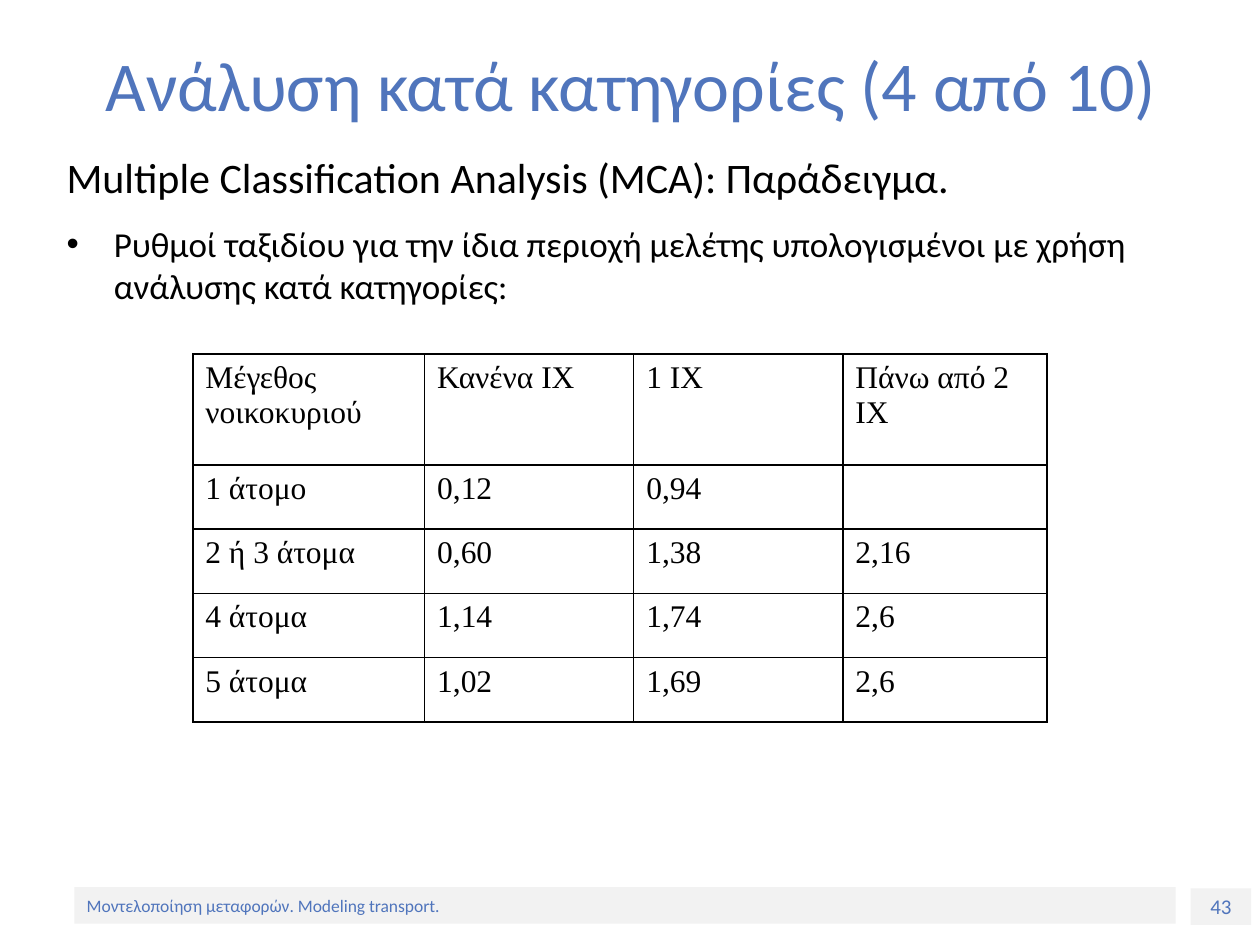
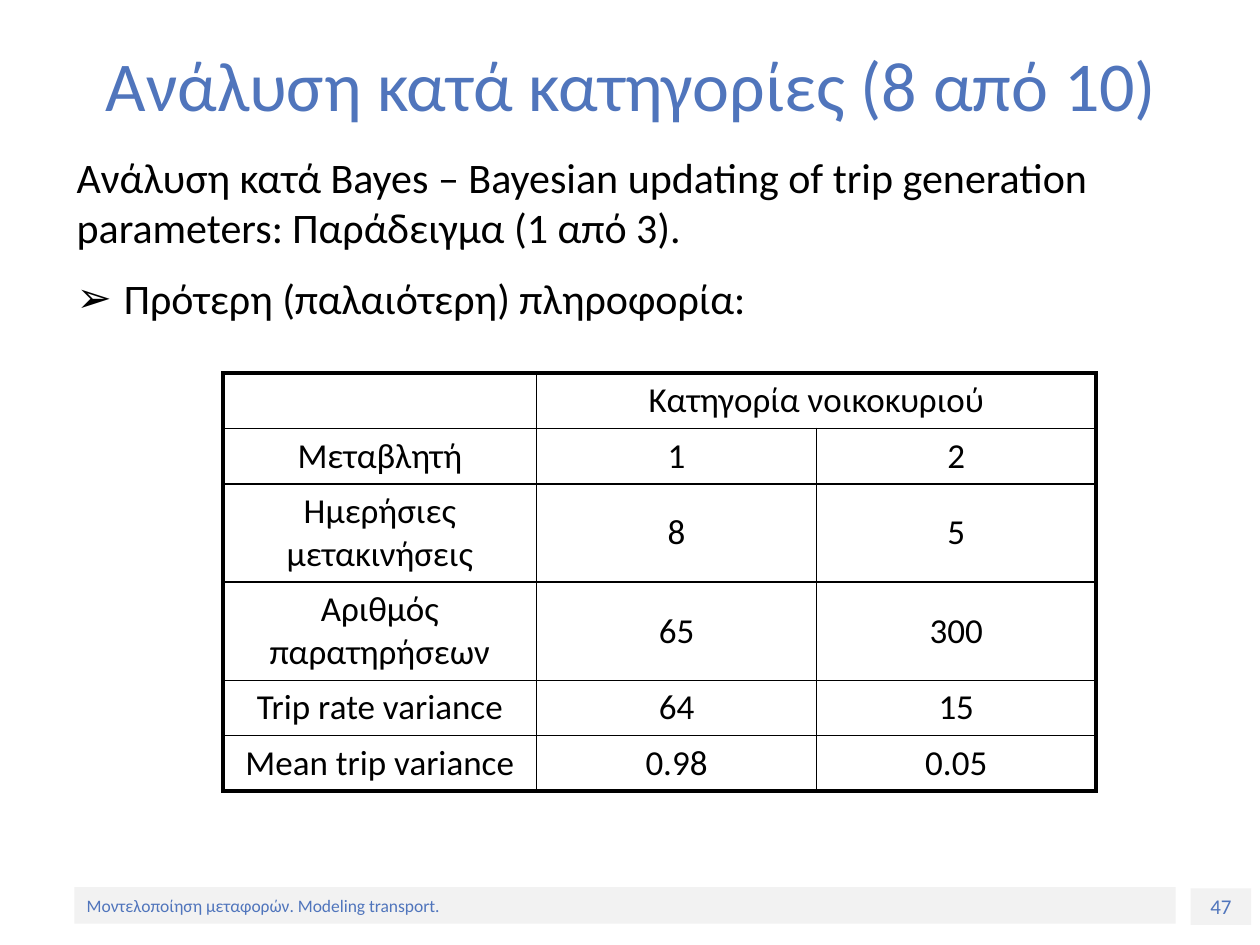
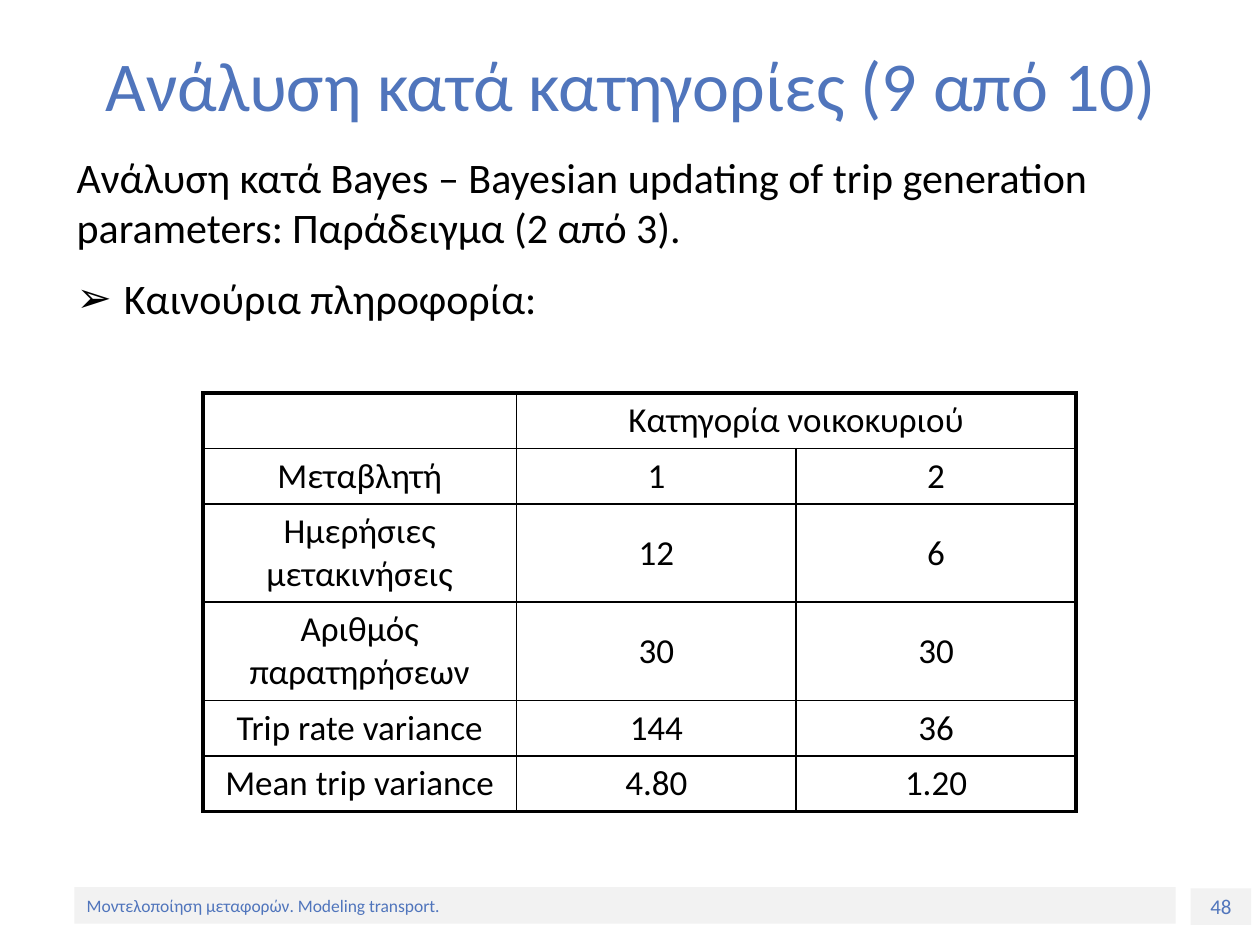
from lxml import etree
from pptx import Presentation
from pptx.dml.color import RGBColor
from pptx.enum.shapes import MSO_SHAPE
from pptx.enum.text import MSO_ANCHOR, PP_ALIGN
from pptx.oxml.ns import qn
from pptx.util import Emu, Inches, Pt

RECTANGLE = MSO_SHAPE.RECTANGLE
TOP, MIDDLE = MSO_ANCHOR.TOP, MSO_ANCHOR.MIDDLE
LEFT, CENTER = PP_ALIGN.LEFT, PP_ALIGN.CENTER

# The grid divides the slide into 100 columns and 75 rows
COLUMNS, ROWS = 100, 75
BLUE, BLACK, GRAY = "5075BC", "000000", "F2F2F2"
SANS, SERIF = "Calibri", "Times New Roman"
FOOTER = "Μοντελοποίηση μεταφορών. Modeling transport."


def color(value):
    return RGBColor.from_string(value)


def set_values(target, values):
    for name, value in values.items():
        setattr(target, name, value)


class Deck:
    """Holds the shared style and the current slide."""

    def __init__(self):
        self.presentation = Presentation()
        set_values(self.presentation,
                   {"slide_width": Inches(10), "slide_height": Inches(7.5)})
        self.slide = None

    def x(self, columns):
        return Emu(round(self.presentation.slide_width * columns / COLUMNS))

    def y(self, rows):
        return Emu(round(self.presentation.slide_height * rows / ROWS))

    def place(self, left, top, width, height):
        return self.x(left), self.y(top), self.x(width), self.y(height)

    def fill_paragraph(self, paragraph, text, size, ink=BLACK, font=SANS,
                       align=LEFT, bullet=None, before=0):
        paragraph.text = text
        if bullet:
            indent = self.x(3.75)
            properties = paragraph._p.get_or_add_pPr()
            properties.set("marL", str(indent))
            properties.set("indent", str(-indent))
            for tag, name, value in (("a:buFont", "typeface", "Arial"),
                                     ("a:buChar", "char", bullet)):
                etree.SubElement(properties, qn(tag)).set(name, value)
        set_values(paragraph, {"alignment": align, "space_before": Pt(before)})
        set_values(paragraph.font, {"name": font, "size": Pt(size)})
        paragraph.font.color.rgb = color(ink)

    def band(self, box, text, size, align):
        shape = self.slide.shapes.add_shape(RECTANGLE, *self.place(*box))
        shape.shadow.inherit = False
        shape.fill.solid()
        shape.fill.fore_color.rgb = color(GRAY)
        shape.line.fill.background()
        shape.text_frame.vertical_anchor = MIDDLE
        self.fill_paragraph(shape.text_frame.paragraphs[0], text, size, BLUE,
                            align=align)

    def text(self, box, anchor, paragraphs):
        frame = self.slide.shapes.add_textbox(*self.place(*box)).text_frame
        set_values(frame, {"word_wrap": True, "vertical_anchor": anchor})
        for index, values in enumerate(paragraphs):
            paragraph = frame.add_paragraph() if index else frame.paragraphs[0]
            self.fill_paragraph(paragraph, **values)

    def start_slide(self, part, page):
        """Adds a slide with its footer bands and numbered title."""
        layout = self.presentation.slide_layouts[6]
        self.slide = self.presentation.slides.add_slide(layout)
        self.band((94.5, 70.5, 4.8, 2.9), str(page), 12, CENTER)
        self.band((5.9, 70.4, 87.4, 2.9), FOOTER, 10, LEFT)
        title = f"Ανάλυση κατά κατηγορίες ({part} από 10)"
        self.text((5.1, 2.8, 90, 7.7), MIDDLE,
                  [{"text": title, "size": 40, "ink": BLUE, "align": CENTER}])

    def body(self, left, heading, item, bullet, item_size):
        self.text((left, 11.5, COLUMNS - 2 * left, 59.1), TOP, [
            {"text": heading, "size": 24},
            {"text": item, "size": item_size, "bullet": bullet, "before": 12}])

    def borders(self, cell, widths):
        properties = cell._tc.get_or_add_tcPr()
        for side, width in zip("LRTB", widths):
            line = etree.SubElement(properties, qn(f"a:ln{side}"), w=str(Pt(width)))
            fill = etree.SubElement(line, qn("a:solidFill"))
            etree.SubElement(fill, qn("a:srgbClr"), val=BLACK)

    def table(self, left, top, widths, heights, data, outer=1, merge=None,
              anchor=TOP, **style):
        box = self.place(left, top, sum(widths), sum(heights))
        table = self.slide.shapes.add_table(len(heights), len(widths), *box).table
        set_values(table, {"first_row": False, "horz_banding": False})
        for column, width in zip(table.columns, widths):
            column.width = self.x(width)
        for row, height in zip(table.rows, heights):
            row.height = self.y(height)
        if merge:
            start, end = merge
            table.cell(*start).merge(table.cell(*end))
        for r, values in enumerate(data):
            for c, value in enumerate(values):
                cell = table.cell(r, c)
                if cell.is_spanned:
                    continue
                last_column = c + (cell.span_width if cell.is_merge_origin else 1)
                at_edge = (c == 0, last_column == len(widths),
                           r == 0, r == len(heights) - 1)
                self.borders(cell, [outer if edge else 1 for edge in at_edge])
                cell.fill.background()
                cell.vertical_anchor = anchor
                self.fill_paragraph(cell.text_frame.paragraphs[0], value, **style)


TRIP_RATES = [
    ["Μέγεθος νοικοκυριού", "Κανένα ΙΧ", "1 ΙΧ", "Πάνω από 2 ΙΧ"],
    ["1 άτομο", "0,12", "0,94", ""],
    ["2 ή 3 άτομα", "0,60", "1,38", "2,16"],
    ["4 άτομα", "1,14", "1,74", "2,6"],
    ["5 άτομα", "1,02", "1,69", "2,6"],
]
VARIABLES = ["Ημερήσιες μετακινήσεις", "Αριθμός παρατηρήσεων",
             "Trip rate variance", "Mean trip variance"]

# Part, page, example number, item, table position, values by household category
BAYES_SLIDES = [
    (8, 47, 1, "Πρότερη (παλαιότερη) πληροφορία:", (17.7, 29.6),
     ["8", "65", "64", "0.98"], ["5", "300", "15", "0.05"]),
    (9, 48, 2, "Καινούρια πληροφορία:", (16.1, 31.2),
     ["12", "30", "144", "4.80"], ["6", "30", "36", "1.20"]),
]


def main():
    deck = Deck()

    # Trip rates by household size and cars
    deck.start_slide(4, 43)
    deck.body(4.3, "Multiple Classification Analysis (MCA): Παράδειγμα.",
              "Ρυθμοί ταξιδίου για την ίδια περιοχή μελέτης υπολογισμένοι "
              "με χρήση ανάλυσης κατά κατηγορίες:", "•", 20)
    deck.table(15.3, 28.1, [18.4, 16.6, 16.6, 16.2], [8.8] + [5.1] * 4,
               TRIP_RATES, size=18, font=SERIF)

    # Bayesian updating: earlier, then new information
    for part, page, example, item, position, first, second in BAYES_SLIDES:
        deck.start_slide(part, page)
        deck.body(5.1, "Ανάλυση κατά Bayes – Bayesian updating of trip generation "
                  f"parameters: Παράδειγμα ({example} από 3).", item, "➢", 24)
        data = [["", "Κατηγορία νοικοκυριού", ""], ["Μεταβλητή", "1", "2"],
                *zip(VARIABLES, first, second)]
        deck.table(*position, [24.9, 22.2, 22.2], [4.4, 4.4, 7.8, 7.8, 4.4, 4.4],
                   data, outer=2.25, merge=((0, 1), (0, 2)), anchor=MIDDLE,
                   size=20, align=CENTER)

    deck.presentation.save("out.pptx")


if __name__ == "__main__":
    main()
